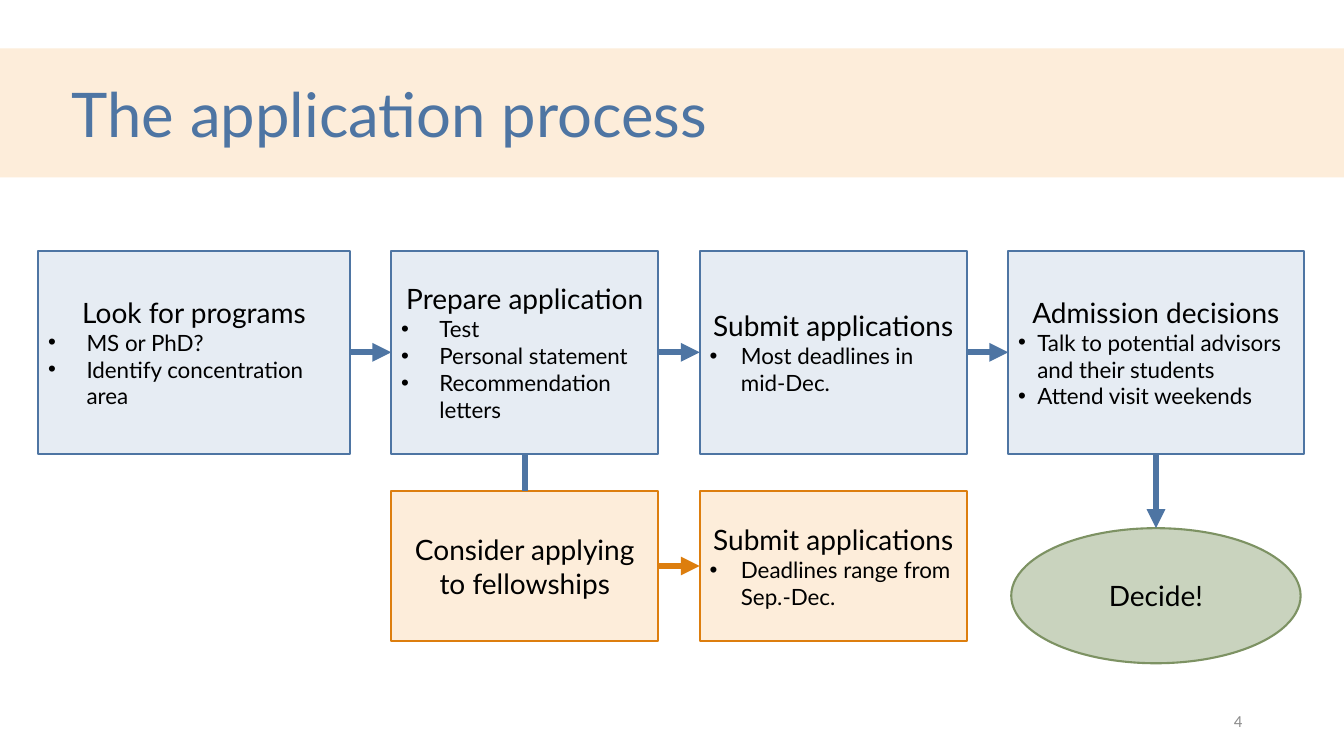
from lxml import etree
from pptx import Presentation
from pptx.dml.color import RGBColor
from pptx.enum.shapes import MSO_CONNECTOR, MSO_SHAPE
from pptx.enum.text import MSO_ANCHOR, PP_ALIGN
from pptx.oxml.ns import qn
from pptx.util import Inches, Pt

RECT, OVAL = MSO_SHAPE.RECTANGLE, MSO_SHAPE.OVAL
STRAIGHT = MSO_CONNECTOR.STRAIGHT
MIDDLE = MSO_ANCHOR.MIDDLE
LEFT, CENTER, RIGHT = PP_ALIGN.LEFT, PP_ALIGN.CENTER, PP_ALIGN.RIGHT
TOP_SITE, LEFT_SITE, BOTTOM_SITE, RIGHT_SITE = range(4)

BLUE, ORANGE, GREEN = "4E75A3", "DD7E0E", "7D9263"
PALE_BLUE, PALE_ORANGE, PALE_GREEN = "E6ECF3", "FDEDDA", "C9D3BE"
BLACK, GREY = "000000", "8C8C8C"

TITLE = "The application process"
PAGE = "4"
COLUMN_WIDTHS = [3.09, 2.65, 2.65, 2.93]
LEFT_MARGIN, COLUMN_GAP = 0.38, 0.41
MAIN_ROW = (2.49, 2.01)
FELLOWSHIP_ROW = (4.87, 1.49)
DECISION_ROW = (5.24, 1.34)

STEPS = {
    "look": (0, MAIN_ROW, RECT, PALE_BLUE, BLUE, "Look for programs", 0.38,
             ["MS or PhD?", "Identify concentration area"]),
    "prepare": (1, MAIN_ROW, RECT, PALE_BLUE, BLUE, "Prepare application", 0.38,
                ["Test", "Personal statement", "Recommendation letters"]),
    "submit": (2, MAIN_ROW, RECT, PALE_BLUE, BLUE, "Submit applications", 0.31,
               ["Most deadlines in mid-Dec."]),
    "admission": (3, MAIN_ROW, RECT, PALE_BLUE, BLUE, "Admission decisions", 0.19,
                  ["Talk to potential advisors and their students",
                   "Attend visit weekends"]),
    "fellowships": (1, FELLOWSHIP_ROW, RECT, PALE_ORANGE, ORANGE,
                    "Consider applying to fellowships", 0, []),
    "fellowship submit": (2, FELLOWSHIP_ROW, RECT, PALE_ORANGE, ORANGE,
                          "Submit applications", 0.31,
                          ["Deadlines range from Sep.-Dec."]),
    "decide": (3, DECISION_ROW, OVAL, PALE_GREEN, GREEN, "Decide!", 0, []),
}
ACROSS = (RIGHT_SITE, LEFT_SITE)
DOWN = (BOTTOM_SITE, TOP_SITE)
LINKS = [
    ("look", "prepare", ACROSS, BLUE, True),
    ("prepare", "submit", ACROSS, BLUE, True),
    ("submit", "admission", ACROSS, BLUE, True),
    ("admission", "decide", DOWN, BLUE, True),
    ("prepare", "fellowships", DOWN, BLUE, False),
    ("fellowships", "fellowship submit", ACROSS, ORANGE, True),
]


def color(value):
    return RGBColor.from_string(value)


def write(paragraph, words, size, tint, align, font="Lato"):
    paragraph.text = words
    paragraph.alignment = align
    for run in paragraph.runs:
        run.font.name = font
        run.font.size = Pt(size)
        run.font.color.rgb = color(tint)


def add_bullet(paragraph, indent):
    properties = paragraph._p.get_or_add_pPr()
    properties.set("marL", str(Inches(indent)))
    properties.set("indent", str(-Inches(indent)))
    etree.SubElement(properties, qn("a:buFont")).set("typeface", "Arial")
    etree.SubElement(properties, qn("a:buChar")).set("char", "•")


def add_box(slide, kind, left, top, width, height, fill, outline=None):
    box = slide.shapes.add_shape(kind, *map(Inches, (left, top, width, height)))
    box.shadow.inherit = False
    box.fill.solid()
    box.fill.fore_color.rgb = color(fill)
    if outline:
        box.line.color.rgb = color(outline)
        box.line.width = Pt(1.5)
    else:
        box.line.fill.background()
    return box


def add_step(slide, column, row, kind, fill, outline, heading, indent, bullets):
    left = LEFT_MARGIN + sum(COLUMN_WIDTHS[:column]) + column * COLUMN_GAP
    width = COLUMN_WIDTHS[column]
    if kind == OVAL:
        left, width = left + 0.03, width - 0.06
    step = add_box(slide, kind, left, row[0], width, row[1], fill, outline)
    frame = step.text_frame
    frame.word_wrap = True
    frame.vertical_anchor = MIDDLE
    write(frame.paragraphs[0], heading, 20, BLACK, CENTER)
    for bullet in bullets:
        paragraph = frame.add_paragraph()
        write(paragraph, bullet, 16, BLACK, LEFT)
        add_bullet(paragraph, indent)
    return step


def add_link(slide, start, end, sites, tint, arrow):
    link = slide.shapes.add_connector(STRAIGHT, 0, 0, 0, 0)
    link.begin_connect(start, sites[0])
    link.end_connect(end, sites[1])
    link.line.color.rgb = color(tint)
    link.line.width = Pt(4.5)
    if arrow:
        etree.SubElement(link.line._get_or_add_ln(), qn("a:tailEnd")).set("type", "triangle")
    etree.SubElement(link._element.spPr, qn("a:effectLst"))


def main():
    deck = Presentation()
    deck.slide_width, deck.slide_height = Inches(13.33), Inches(7.5)
    slide = deck.slides.add_slide(deck.slide_layouts[5])

    title = slide.shapes.title
    band = add_box(slide, RECT, 0, 0.48, 13.33, 1.28, PALE_ORANGE)
    title._element.addprevious(band._element)
    title.left, title.top, title.width, title.height = map(Inches, (0.61, 0.7, 12.09, 0.84))
    title.text_frame.vertical_anchor = MIDDLE
    write(title.text_frame.paragraphs[0], TITLE, 44, BLUE, LEFT)

    steps = {key: add_step(slide, *step) for key, step in STEPS.items()}
    for start, end, sites, tint, arrow in LINKS:
        add_link(slide, steps[start], steps[end], sites, tint, arrow)

    number = slide.shapes.add_textbox(*map(Inches, (9.42, 6.95, 3, 0.4)))
    number.text_frame.word_wrap = True
    number.text_frame.vertical_anchor = MIDDLE
    write(number.text_frame.paragraphs[0], PAGE, 12, GREY, RIGHT, "Calibri")
    deck.save("out.pptx")


if __name__ == "__main__":
    main()
